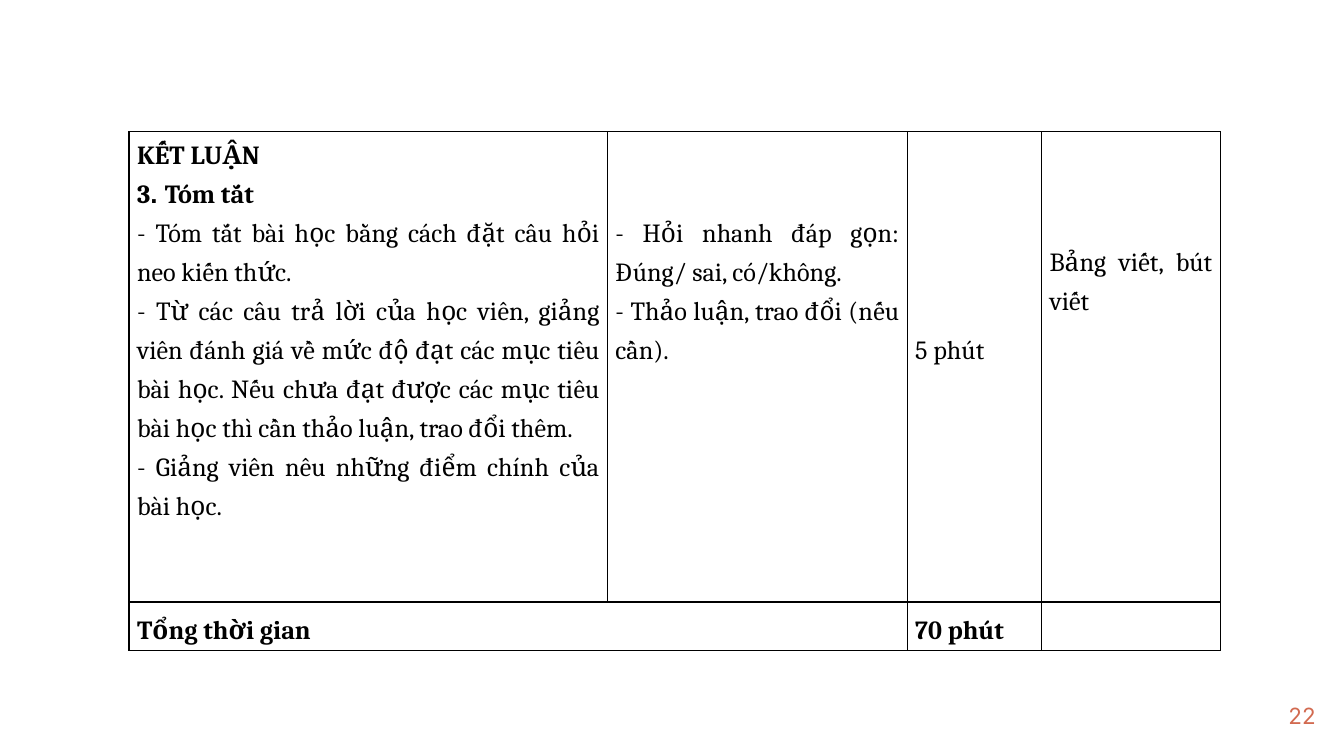
from lxml.etree import SubElement
from pptx import Presentation
from pptx.dml.color import RGBColor
from pptx.enum.text import MSO_ANCHOR, PP_ALIGN
from pptx.oxml.ns import qn
from pptx.util import Inches, Pt

COLORS = {"text": "000000", "border": "000000", "number": "D26A50"}
FONT = "Cambria"
LINE = 0.29  # height of one line of table text, inches

COLUMNS = [3.56, 2.23, 1, 1.33]
ROWS = [3.5, 0.36]

CONTENT = [
    "- Tóm tắt bài học bằng cách đặt câu hỏi neo kiến thức. ",
    "- Từ các câu trả lời của học viên, giảng viên đánh giá về mức độ đạt các "
    "mục tiêu bài học. Nếu chưa đạt được các mục tiêu bài học thì cần thảo "
    "luận, trao đổi thêm. ",
    "- Giảng viên nêu những điểm chính của bài học. ",
]
METHODS = [
    "- Hỏi nhanh đáp gọn: Đúng/ sai, có/không.",
    "- Thảo luận, trao đổi (nếu cần).",
]


def style_font(font, name, size, color, bold=False):
    font.name = name
    font.size = Pt(size)
    font.bold = bold
    font.color.rgb = RGBColor.from_string(COLORS[color])


def format_cell(cell):
    cell.margin_left = cell.margin_right = Inches(0.06)
    cell.margin_top = cell.margin_bottom = 0
    tcPr = cell._tc.get_or_add_tcPr()
    for side in ("lnL", "lnR", "lnT", "lnB"):
        ln = SubElement(tcPr, qn(f"a:{side}"), w=str(Pt(0.75)))
        fill = SubElement(ln, qn("a:solidFill"))
        SubElement(fill, qn("a:srgbClr"), val=COLORS["border"])
    cell.fill.background()


def write_cell(cell, paragraphs, bold_count=0, align=PP_ALIGN.JUSTIFY, skip=0):
    """Each paragraph is a list of (text, font) runs or a plain string."""
    cell.margin_top = Inches(skip * LINE)
    tf = cell.text_frame
    for i, runs in enumerate(paragraphs):
        p = tf.paragraphs[0] if i == 0 else tf.add_paragraph()
        p.alignment = align
        p.line_spacing = 1.3
        style_font(p.font, FONT, 14, "text", i < bold_count)
        for text, font in [(runs, FONT)] if isinstance(runs, str) else runs:
            r = p.add_run()
            r.text = text
            if font != FONT:
                r.font.name = font


def add_lesson_table(s, left, top):
    frame = s.shapes.add_table(len(ROWS), len(COLUMNS), Inches(left), Inches(top),
                               Inches(sum(COLUMNS)), Inches(sum(ROWS)))
    table = frame.table
    table.first_row = table.horz_banding = False
    for column, width in zip(table.columns, COLUMNS):
        column.width = Inches(width)
    for row, height in zip(table.rows, ROWS):
        row.height = Inches(height)
    for cell in table.iter_cells():
        format_cell(cell)

    # Conclusion row: content, methods, time, equipment
    headings = ["KẾT LUẬN", [("3", FONT), (". ", "Arial"), ("Tóm tắt", FONT)]]
    write_cell(table.cell(0, 0), headings + CONTENT, bold_count=2)
    write_cell(table.cell(0, 1), METHODS, skip=2)
    write_cell(table.cell(0, 2), ["5 phút"], skip=5)
    write_cell(table.cell(0, 3), ["Bảng viết, bút viết"], skip=2.75)

    # Total row
    table.cell(1, 0).merge(table.cell(1, 1))
    for column, text in ((0, "Tổng thời gian"), (2, "70 phút")):
        cell = table.cell(1, column)
        cell.vertical_anchor = MSO_ANCHOR.MIDDLE
        write_cell(cell, [text], bold_count=1, align=PP_ALIGN.LEFT)


def add_page_number(s, left, top, width, height, number):
    box = s.shapes.add_textbox(Inches(left), Inches(top), Inches(width), Inches(height))
    tf = box.text_frame
    tf.word_wrap = True
    tf.margin_left = tf.margin_right = tf.margin_top = tf.margin_bottom = 0
    tf.vertical_anchor = MSO_ANCHOR.MIDDLE
    p = tf.paragraphs[0]
    p.text = number
    p.alignment = PP_ALIGN.RIGHT
    style_font(p.font, "Inter", 12, "number")


def main():
    prs = Presentation()
    prs.slide_width = Inches(10)
    prs.slide_height = prs.slide_width * 9 // 16  # widescreen
    s = prs.slides.add_slide(prs.slide_layouts[6])
    add_page_number(s, 9.19, 5.11, 0.6, 0.43, "22")
    add_lesson_table(s, 0.96, 0.98)
    prs.save("out.pptx")


if __name__ == "__main__":
    main()
